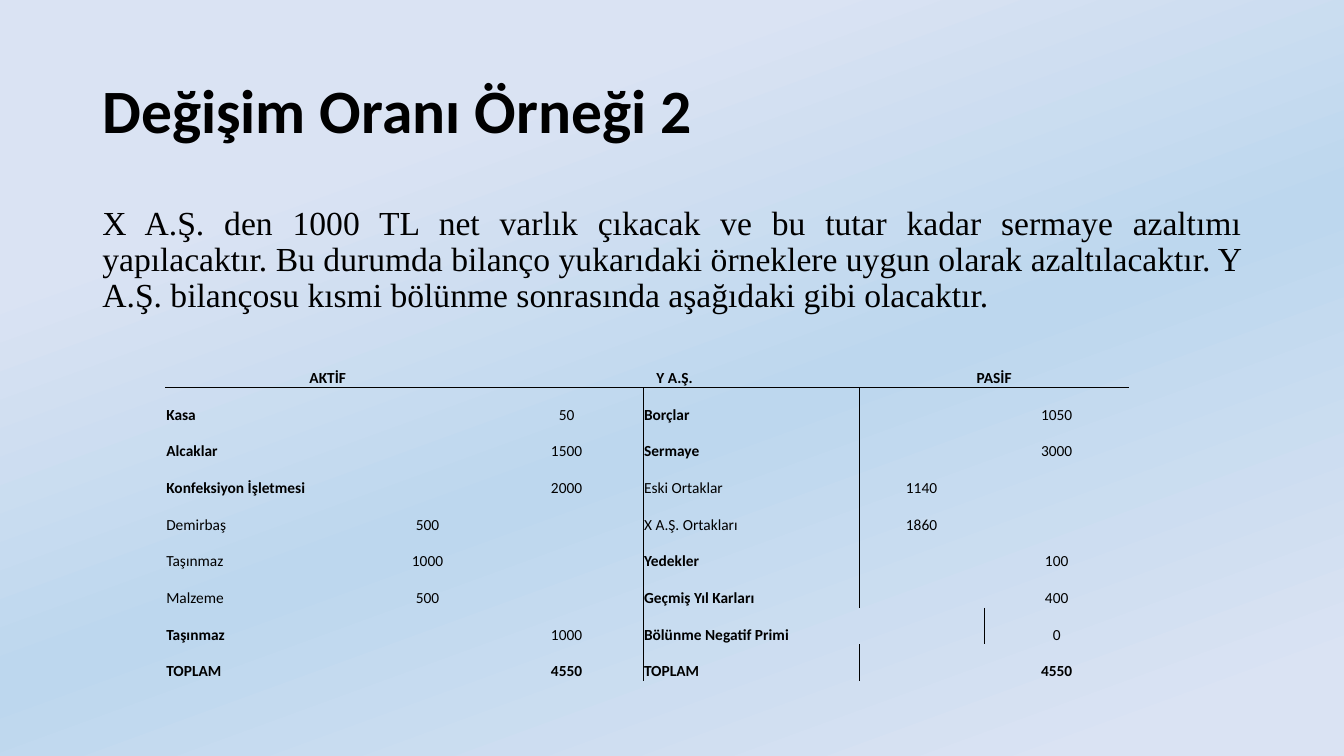
from lxml import etree
from copy import deepcopy
from pptx import Presentation
from pptx.dml.color import RGBColor
from pptx.enum import text
from pptx.oxml.ns import qn
from pptx.util import Cm, Pt

TITLE = "Değişim Oranı Örneği 2"
EXPLANATION = (
    "X A.Ş. den 1000 TL net varlık çıkacak ve bu tutar kadar sermaye azaltımı "
    "yapılacaktır. Bu durumda bilanço yukarıdaki örneklere uygun olarak "
    "azaltılacaktır. Y A.Ş. bilançosu kısmi bölünme sonrasında aşağıdaki gibi "
    "olacaktır."
)
HEADINGS = ["AKTİF", "Y A.Ş.", "PASİF"]
# Account, detail amount, total amount
ASSETS = [
    ("Kasa", "", "50"),
    ("Alcaklar", "", "1500"),
    ("Konfeksiyon İşletmesi", "", "2000"),
    ("Demirbaş", "500", ""),
    ("Taşınmaz", "1000", ""),
    ("Malzeme", "500", ""),
    ("Taşınmaz", "", "1000"),
    ("TOPLAM", "", "4550"),
]
LIABILITIES = [
    ("Borçlar", "", "1050"),
    ("Sermaye", "", "3000"),
    ("Eski Ortaklar", "1140", ""),
    ("X A.Ş. Ortakları", "1860", ""),
    ("Yedekler", "", "100"),
    ("Geçmiş Yıl Karları", "", "400"),
    ("Bölünme Negatif Primi", "", "0"),
    ("TOPLAM", "", "4550"),
]
WIDE_ACCOUNTS = {"Konfeksiyon İşletmesi", "Bölünme Negatif Primi"}
COLUMN_WIDTHS = [5.03, 3.15, 3.86, 5.44, 3.15, 3.66]
GRADIENT = [(0.23, "DAE3F3"), (0.55, "BDD7EE"), (0.93, "DAE3F3")]
BLACK = "000000"
NO_TABLE_STYLE = "{2D5ABB26-0587-4C30-8999-92F81FD0307C}"
LEFT, CENTER = text.PP_ALIGN.LEFT, text.PP_ALIGN.CENTER


def color(hex_code):
    return RGBColor.from_string(hex_code)


def write(paragraph, content, size, font_name, bold=False, align=LEFT):
    paragraph.text = content
    paragraph.alignment = align
    font = paragraph.font
    font.size, font.name, font.bold = Pt(size), font_name, bold
    font.color.rgb = color(BLACK)


def add_box(slide, top, height, anchor):
    frame = slide.shapes.add_textbox(Cm(2.33), Cm(top), Cm(29.21), Cm(height)).text_frame
    frame.word_wrap = True
    frame.vertical_anchor = anchor
    frame.paragraphs[0].line_spacing = 0.9
    return frame.paragraphs[0]


def add_border(cell, side):
    """Draw a thin black line; side is lnL, lnR, lnT or lnB."""
    line = etree.SubElement(cell._tc.get_or_add_tcPr(), qn(f"a:{side}"), w=str(Pt(0.5)))
    fill = etree.SubElement(line, qn("a:solidFill"))
    etree.SubElement(fill, qn("a:srgbClr"), val=BLACK)


def paint_background(slide):
    fill = slide.background.fill
    fill.gradient()
    fill.gradient_angle = 290
    stop_list = slide.element.find(f".//{qn('a:gsLst')}")
    stop_list.append(deepcopy(stop_list[-1]))
    for stop, (position, hex_code) in zip(fill.gradient_stops, GRADIENT):
        stop.position = position
        stop.color.rgb = color(hex_code)


def add_balance_sheet(slide):
    rows = [[HEADINGS[0], "", HEADINGS[1], "", HEADINGS[2], ""]]
    rows += [asset + liability for asset, liability in zip(ASSETS, LIABILITIES)]
    frame = slide.shapes.add_table(
        len(rows), len(COLUMN_WIDTHS), Cm(4.17), Cm(8.84), Cm(sum(COLUMN_WIDTHS)), Cm(8.33))
    sheet = frame.table
    sheet.first_row = sheet.horz_banding = False
    sheet._tbl.tblPr.find(qn("a:tableStyleId")).text = NO_TABLE_STYLE
    for column, width in zip(sheet.columns, COLUMN_WIDTHS):
        column.width = Cm(width)

    for r, row in enumerate(rows):
        for c, content in enumerate(row):
            cell = sheet.cell(r, c)
            is_heading, is_account = r == 0, c % 3 == 0
            is_main_account = is_account and row[c + 2] != ""
            bold = is_heading or r == len(rows) - 1 or is_main_account
            align = LEFT if is_account and not is_heading else CENTER
            write(cell.text_frame.paragraphs[0], content, 11, "Calibri", bold, align)
            cell.vertical_anchor = text.MSO_ANCHOR.BOTTOM
            cell.margin_left = cell.margin_right = cell.margin_top = Cm(0.02)
            cell.margin_bottom = 0
            if is_heading:
                add_border(cell, "lnB")
            elif c == 2:
                add_border(cell, "lnR")
            elif c == 3:
                add_border(cell, "lnL")
            cell.fill.background()
            if content in WIDE_ACCOUNTS or content in HEADINGS:
                cell.merge(sheet.cell(r, c + 1))


def main():
    deck = Presentation()
    deck.slide_width, deck.slide_height = Cm(33.87), Cm(19.05)
    slide = deck.slides.add_slide(deck.slide_layouts[6])
    paint_background(slide)
    title = add_box(slide, 1.01, 3.68, text.MSO_ANCHOR.MIDDLE)
    write(title, TITLE, 44, "Calibri", bold=True)
    explanation = add_box(slide, 5.07, 3.2, text.MSO_ANCHOR.TOP)
    write(explanation, EXPLANATION, 24, "Times New Roman", align=text.PP_ALIGN.JUSTIFY)
    add_balance_sheet(slide)
    deck.save("out.pptx")


if __name__ == "__main__":
    main()
